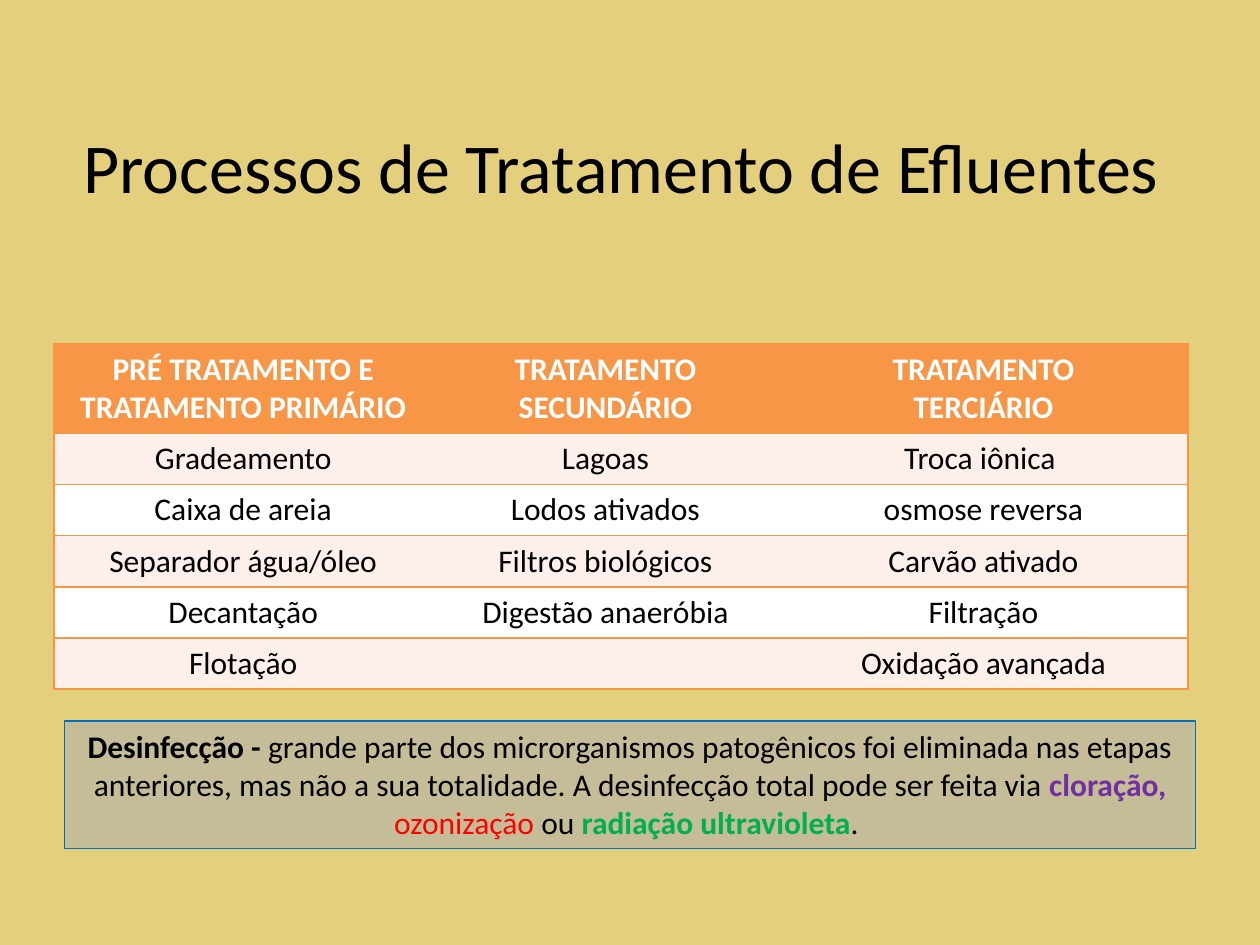
import pptx
import pptx.dml.color
import pptx.enum.shapes
import pptx.enum.text
import pptx.oxml
import pptx.oxml.ns
import pptx.util

RGB = pptx.dml.color.RGBColor
SAND = RGB(0xE4, 0xD0, 0x7C)
ORANGE = RGB(0xF7, 0x96, 0x46)
BLUSH = RGB(0xFD, 0xEF, 0xE9)
WHITE = RGB(0xFF, 0xFF, 0xFF)
BLACK = RGB(0, 0, 0)
KHAKI = RGB(0xC4, 0xBD, 0x97)
BLUE = RGB(0, 0x70, 0xC0)
PURPLE = RGB(0x70, 0x30, 0xA0)
RED = RGB(0xFF, 0, 0)
GREEN = RGB(0, 0xB0, 0x50)

WIDE, HIGH = pptx.util.Inches(10), pptx.util.Inches(7.5)
CENTER = pptx.enum.text.PP_ALIGN.CENTER
MIDDLE = pptx.enum.text.MSO_ANCHOR.MIDDLE
BODY = {"name": "Calibri", "size": pptx.util.Pt(18)}
HEAD = {"name": "Calibri", "size": pptx.util.Pt(40), "bold": False}

TITLE = "Processos de Tratamento de Efluentes"
COLS = (3, 2.75, 3.25)
ROWS = (0.71,) + (0.405,) * 5
CELLS = (
    ("PRÉ TRATAMENTO E\nTRATAMENTO PRIMÁRIO", "TRATAMENTO SECUNDÁRIO", "TRATAMENTO\nTERCIÁRIO"),
    ("Gradeamento", "Lagoas", "Troca iônica "),
    ("Caixa de areia", "Lodos ativados", "osmose reversa"),
    ("Separador água/óleo", "Filtros biológicos", "Carvão ativado"),
    ("Decantação", "Digestão anaeróbia", "Filtração"),
    ("Flotação", "", "Oxidação avançada"),
)
NOTE = (
    ("Desinfecção - ", BLACK, True),
    ("grande parte dos microrganismos patogênicos foi eliminada nas etapas anteriores, "
     "mas não a sua totalidade. A desinfecção total pode ser feita via ", BLACK, False),
    ("cloração, ", PURPLE, True),
    ("ozonização ", RED, False),
    ("ou ", BLACK, False),
    ("radiação ultravioleta", GREEN, True),
    (". ", BLACK, False),
)


def share(x, y, w, h):
    """Turn shares of the slide into a box of lengths."""
    return int(x * WIDE), int(y * HIGH), int(w * WIDE), int(h * HIGH)


def apply(item, form):
    """Set each format value on an object."""
    for key, val in form.items():
        setattr(item, key, val)


def ink(font, form, tone):
    """Format a font and colour it."""
    apply(font, form)
    font.color.rgb = tone


def paint(item, tone):
    """Fill an object with a plain colour."""
    item.fill.solid()
    item.fill.fore_color.rgb = tone


def edge(cell, sides):
    """Draw the named sides of a cell and clear the others."""
    space = pptx.oxml.ns.nsdecls("a")
    props = cell._tc.get_or_add_tcPr()
    for side in "LRTB":
        fill = "<a:noFill/>"
        if side in sides:
            fill = f'<a:solidFill><a:srgbClr val="{ORANGE}"/></a:solidFill>'
        props.append(pptx.oxml.parse_xml(f'<a:ln{side} {space} w="12700">{fill}</a:ln{side}>'))


def add_title(slide, box):
    """Place the centred title in its box."""
    title = slide.shapes.title
    apply(title, dict(zip(("left", "top", "width", "height"), box)))
    title.text_frame.text = TITLE
    title.text_frame.vertical_anchor = MIDDLE
    para = title.text_frame.paragraphs[0]
    para.alignment = CENTER
    ink(para.runs[0].font, HEAD, BLACK)


def add_grid(slide, box):
    """Place the table of treatment steps in its box."""
    table = slide.shapes.add_table(len(ROWS), len(COLS), *box).table
    for col, part in zip(table.columns, COLS):
        col.width = int(box[2] * part / sum(COLS))
    for row, part in zip(table.rows, ROWS):
        row.height = int(box[3] * part / sum(ROWS))
    for r, texts in enumerate(CELLS):
        tone = ORANGE if r == 0 else BLUSH if r % 2 else WHITE
        for c, text in enumerate(texts):
            cell = table.cell(r, c)
            cell.text = text
            edge(cell, "TB" + {0: "L", len(COLS) - 1: "R"}.get(c, ""))
            paint(cell, tone)
            for para in cell.text_frame.paragraphs:
                para.alignment = CENTER
                ink(para.font, {**BODY, "bold": r == 0}, BLACK if r else WHITE)
                for run in para.runs:
                    ink(run.font, {**BODY, "bold": r == 0}, BLACK if r else WHITE)


def add_note(slide, box):
    """Place the framed note on disinfection in its box."""
    note = slide.shapes.add_shape(pptx.enum.shapes.MSO_SHAPE.RECTANGLE, *box)
    note.shadow.inherit = False
    paint(note, KHAKI)
    note.line.color.rgb = BLUE
    note.line.width = pptx.util.Pt(0.75)
    frame = note.text_frame
    apply(frame, {"word_wrap": True, "vertical_anchor": pptx.enum.text.MSO_ANCHOR.TOP,
                  "auto_size": pptx.enum.text.MSO_AUTO_SIZE.SHAPE_TO_FIT_TEXT})
    para = frame.paragraphs[0]
    para.alignment = CENTER
    for text, tone, bold in NOTE:
        run = para.add_run()
        run.text = text
        ink(run.font, {**BODY, "bold": bold}, tone)


def main():
    """Build the slide and save it."""
    deck = pptx.Presentation()
    apply(deck, {"slide_width": WIDE, "slide_height": HIGH})
    slide = deck.slides.add_slide(deck.slide_layouts.get_by_name("Title Only"))
    paint(slide.background, SAND)
    add_title(slide, share(0.043, 0.09, 0.9, 0.17))
    add_grid(slide, share(0.043, 0.364, 0.9, 0.364))
    add_note(slide, share(0.051, 0.763, 0.898, 0.135))
    deck.save("out.pptx")


if __name__ == "__main__":
    main()
